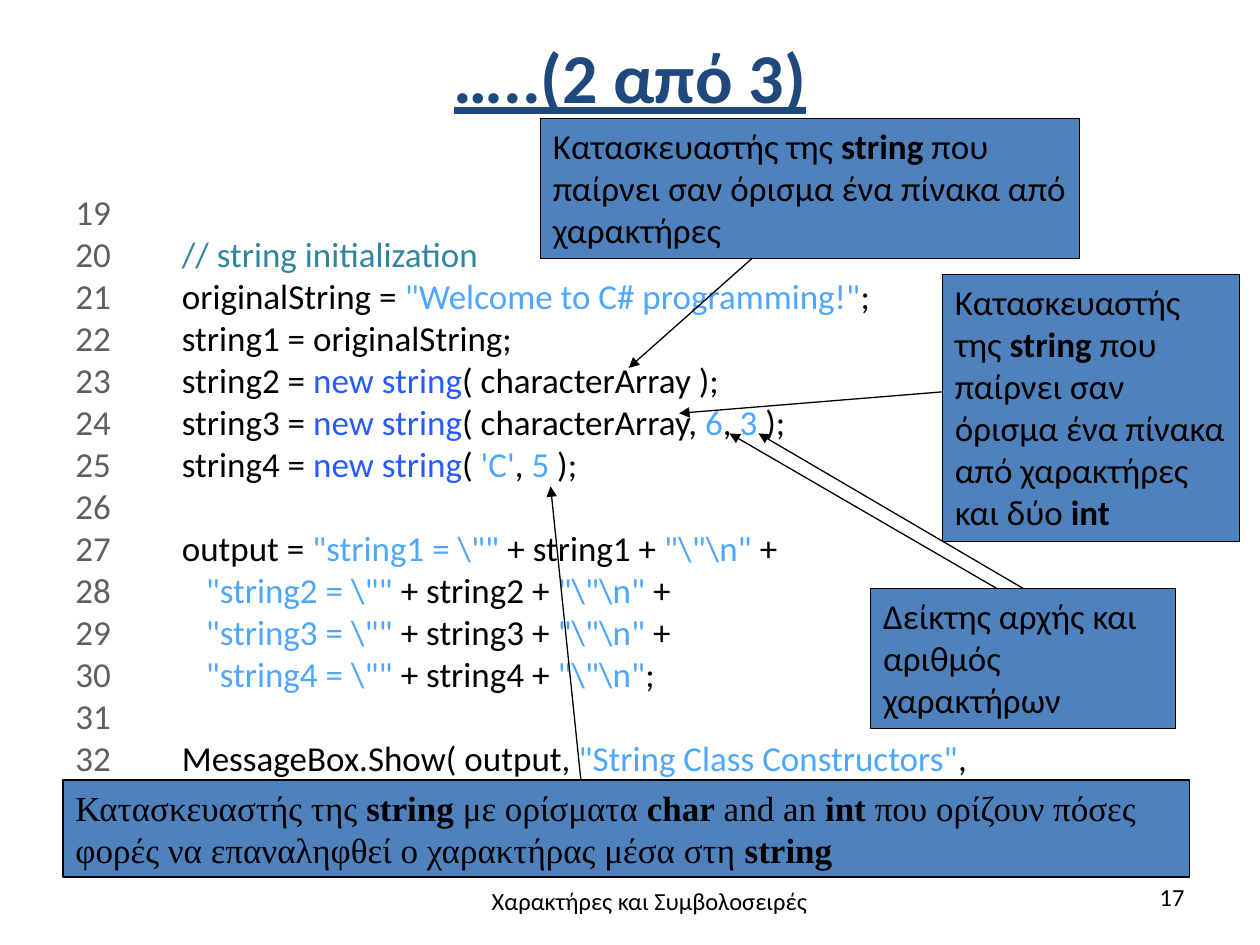
from dataclasses import dataclass
from typing import Any

from lxml import etree
from pptx import Presentation
from pptx import util as u
from pptx.dml.color import RGBColor
from pptx.enum import shapes, text
from pptx.oxml import ns

BLACK = RGBColor(0x00, 0x00, 0x00)
NAVY = RGBColor(0x1F, 0x49, 0x7D)
FILL = RGBColor(0x4F, 0x81, 0xBD)
GREY = RGBColor(0x5F, 0x5F, 0x5F)
TEAL = RGBColor(0x31, 0x85, 0x9C)
LITERAL = RGBColor(0x4D, 0xA6, 0xFF)
KEYWORD = RGBColor(0x27, 0x5A, 0xFF)

COLUMNS, ROWS = 100, 75
FIRST_LINE = 19
NEW = ("new string", KEYWORD)
QUOTE = ('"\\"\\n"', LITERAL)


def output_part(number, ending):
    """Return the runs that print one of the numbered strings."""
    return [(f'"string{number} = \\""', LITERAL), (f" + string{number} + ", BLACK),
            QUOTE, (ending, BLACK)]


CODE = [
    (0, []),
    (0, [("// string initialization", TEAL)]),
    (0, [("originalString = ", BLACK), ('"Welcome to C# programming!"', LITERAL), (";", BLACK)]),
    (0, [("string1 = originalString;", BLACK)]),
    (0, [("string2 = ", BLACK), NEW, ("( characterArray );", BLACK)]),
    (0, [("string3 = ", BLACK), NEW, ("( characterArray, ", BLACK), ("6", LITERAL),
         (", ", BLACK), ("3", LITERAL), (" );", BLACK)]),
    (0, [("string4 = ", BLACK), NEW, ("( ", BLACK), ("'C'", LITERAL), (", ", BLACK),
         ("5", LITERAL), (" );", BLACK)]),
    (0, []),
    (0, [("output = ", BLACK)] + output_part(1, " +")),
    (1, output_part(2, " +")),
    (1, output_part(3, " +")),
    (1, output_part(4, ";")),
    (0, []),
    (0, [("MessageBox.Show( output, ", BLACK), ('"String Class Constructors"', LITERAL),
         (",", BLACK)]),
]


@dataclass
class SlideBuilder:
    """Hold the style and the current slide, placing elements on a grid."""

    presentation: Any
    slide: Any
    font: str = "Calibri"
    size: float = 20
    line_width: float = 0.75

    def place(self, column, row):
        """Turn a grid position into slide lengths."""
        return (round(column * self.presentation.slide_width / COLUMNS),
                round(row * self.presentation.slide_height / ROWS))

    def add_run(self, paragraph, words, color=BLACK, bold=False, size=None, font=None):
        """Add one styled run to a paragraph."""
        run = paragraph.add_run()
        run.text = words
        run.font.name = font or self.font
        run.font.size = u.Pt(size or self.size)
        run.font.bold = bold
        run.font.color.rgb = color
        return run

    def add_box(self, column, row, width, height):
        """Add a wrapping text box."""
        box = self.slide.shapes.add_textbox(*self.place(column, row), *self.place(width, height))
        box.text_frame.word_wrap = True
        return box

    def add_label(self, area, words, align, size=14, color=BLACK):
        """Add a single-line label and return its box and run."""
        box = self.add_box(*area)
        paragraph = box.text_frame.paragraphs[0]
        paragraph.alignment = align
        return box, self.add_run(paragraph, words, color, size=size)

    def add_title(self, area, words):
        """Add the underlined title."""
        box, run = self.add_label(area, words, text.PP_ALIGN.CENTER, 40, NAVY)
        box.text_frame.vertical_anchor = text.MSO_ANCHOR.MIDDLE
        run.font.bold = run.font.underline = True

    def add_code(self, area, lines):
        """Add numbered code lines with hanging indents."""
        frame = self.add_box(*area).text_frame
        for index, (level, runs) in enumerate(lines):
            paragraph = frame.paragraphs[0] if index == 0 else frame.add_paragraph()
            margin = self.place(8.45 + 1.9 * level, 0)[0]
            properties = paragraph._p.get_or_add_pPr()
            properties.set("marL", str(margin))
            properties.set("indent", str(-margin))
            self.add_run(paragraph, str(FIRST_LINE + index) + ("\t" if runs else ""), GREY)
            for words, color in runs:
                self.add_run(paragraph, words, color)

    def add_callout(self, area, pieces, font=None):
        """Add a filled note whose pieces alternate between plain and bold."""
        column, row, width, height = area
        shape = self.slide.shapes.add_shape(
            shapes.MSO_SHAPE.RECTANGLE, *self.place(column, row), *self.place(width, height))
        shape.shadow.inherit = False
        shape.fill.solid()
        shape.fill.fore_color.rgb = FILL
        shape.line.color.rgb = BLACK
        shape.line.width = u.Pt(self.line_width)
        frame = shape.text_frame
        frame.word_wrap = True
        frame.vertical_anchor = text.MSO_ANCHOR.TOP
        paragraph = frame.paragraphs[0]
        paragraph.alignment = text.PP_ALIGN.LEFT
        for index, words in enumerate(pieces):
            self.add_run(paragraph, words, bold=index % 2 == 1, font=font)
        return shape

    def add_arrow(self, start, end, source=None):
        """Add an arrow, joined to the top of a source shape if given."""
        arrow = self.slide.shapes.add_connector(
            shapes.MSO_CONNECTOR.STRAIGHT, *self.place(*start), *self.place(*end))
        if source is not None:
            arrow.begin_connect(source, 0)
        arrow.line.color.rgb = BLACK
        arrow.line.width = u.Pt(self.line_width)
        etree.SubElement(arrow.line._get_or_add_ln(), ns.qn("a:tailEnd"), type="triangle")
        etree.SubElement(arrow._element.spPr, ns.qn("a:effectLst"))


def main():
    """Build and save the slide."""
    presentation = Presentation()
    presentation.slide_width, presentation.slide_height = u.Inches(10), u.Inches(7.5)
    slide = presentation.slides.add_slide(presentation.slide_layouts[6])
    builder = SlideBuilder(presentation, slide)

    builder.add_title((5, -1.1, 90, 14.2), "…..(2 από 3)")
    builder.add_code((5, 14.6, 89.9, 48.1), CODE)

    builder.add_callout(
        (5, 61.9, 89.4, 7.7),
        ["Κατασκευαστής της ", "string ", "με ορίσματα ", "char", " and an ", "int ",
         "που ορίζουν πόσες φορές να επαναληφθεί ο χαρακτήρας μέσα στη ", "string"],
        "Times New Roman")
    builder.add_arrow((46.1, 61.9), (43.7, 38.6))

    index_note = builder.add_callout(
        (69.1, 46.7, 24.2, 11.1), ["Δείκτης αρχής και αριθμός χαρακτήρων"])
    builder.add_arrow((81.2, 46.7), (60.2, 34.4), index_note)
    builder.add_arrow((79.1, 46.7), (57.9, 34.4))

    builder.add_callout(
        (74.8, 21.8, 23.6, 21.2),
        ["Κατασκευαστής της ", "string ",
         "που παίρνει σαν όρισμα ένα πίνακα από χαρακτήρες και δύο ", "int"])
    builder.add_arrow((74.8, 31.1), (53.9, 32.8))

    builder.add_callout(
        (42.9, 9.4, 42.8, 11.1),
        ["Κατασκευαστής της ", "string ", "που παίρνει σαν όρισμα ένα πίνακα από χαρακτήρες"])
    builder.add_arrow((59.7, 20.5), (49.9, 29.2))

    builder.add_label((34.1, 69.8, 34.9, 5.5), "Χαρακτήρες και Συμβολοσειρές",
                      text.PP_ALIGN.CENTER)
    builder.add_label((71.7, 69.5, 23.3, 4), "17", text.PP_ALIGN.RIGHT)
    presentation.save("out.pptx")


if __name__ == "__main__":
    main()
